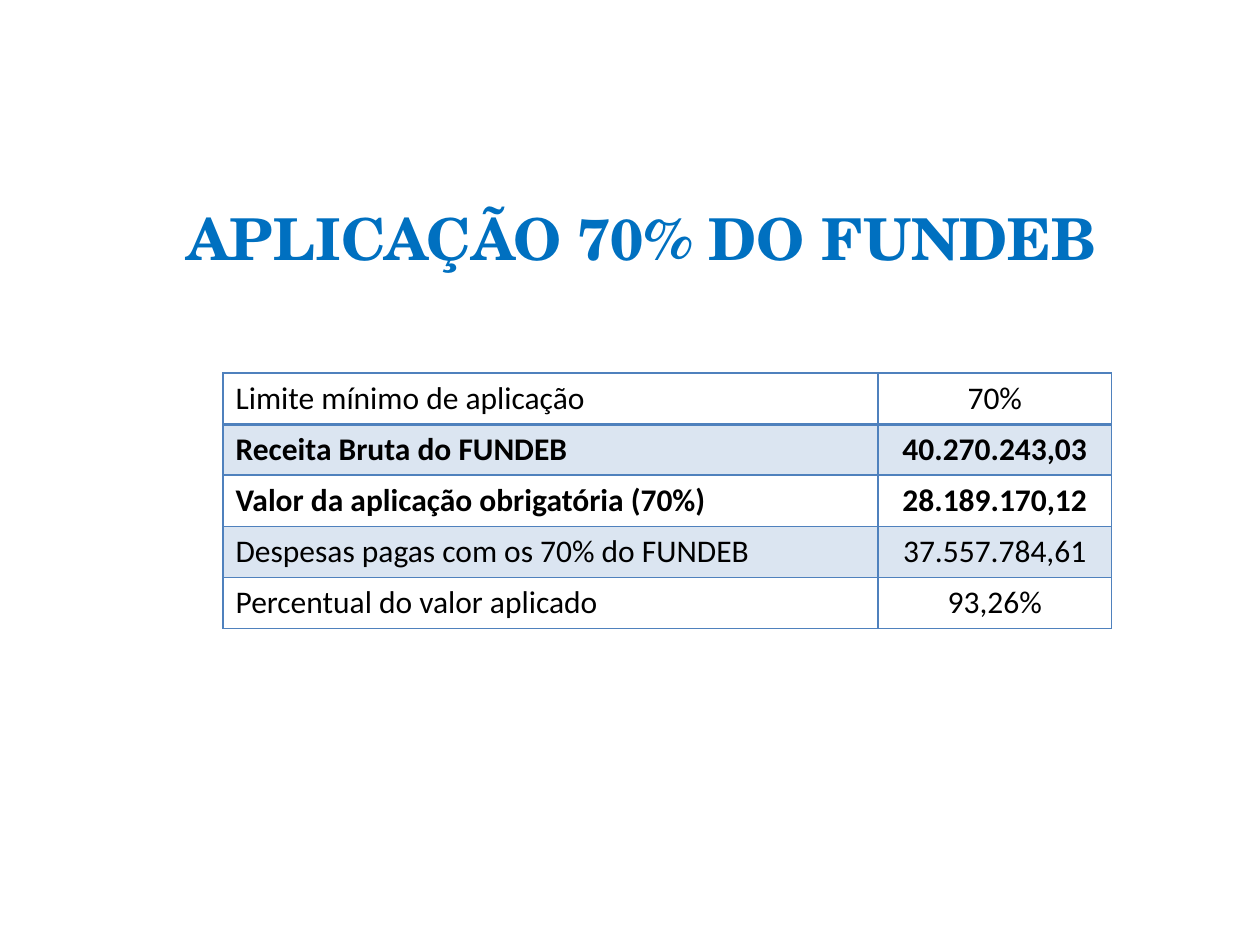
from lxml.etree import SubElement
from pptx import Presentation
from pptx.dml.color import RGBColor
from pptx.enum.text import MSO_ANCHOR, PP_ALIGN
from pptx.oxml.ns import qn
from pptx.util import Inches, Pt

COLORS = {"title": "0070C0", "accent": "4F81BD", "text": "000000"}

ROWS = [
    # label, value, bold
    ("Limite mínimo de aplicação", "70%", False),
    ("Receita Bruta do FUNDEB", "40.270.243,03", True),
    ("Valor da aplicação obrigatória (70%)", "28.189.170,12", True),
    ("Despesas pagas com os 70% do FUNDEB", "37.557.784,61", False),
    ("Percentual do valor aplicado", "93,26%", False),
]
COLUMN_WIDTHS = [5.2, 1.85]


def format_run(run, font_name, size, color, bold):
    run.font.name = font_name
    run.font.size = Pt(size)
    run.font.color.rgb = RGBColor.from_string(COLORS[color])
    run.font.bold = bold


def add_borders(cell, widths):
    """Draw the cell's edges; widths maps an edge tag to points."""
    properties = cell._tc.get_or_add_tcPr()
    for position, (edge, width) in enumerate(widths.items()):
        line = properties.makeelement(qn(f"a:{edge}"), {"w": str(Pt(width))})
        fill = SubElement(line, qn("a:solidFill"))
        SubElement(fill, qn("a:srgbClr"), val=COLORS["accent"])
        properties.insert(position, line)


presentation = Presentation()
presentation.slide_width = Inches(10)
presentation.slide_height = Inches(7.5)
slide = presentation.slides.add_slide(presentation.slide_layouts[5])

# Title
title = slide.shapes.title
title.left, title.top = Inches(0.59), Inches(0.76)
title.width, title.height = Inches(9), Inches(1.5)
title_frame = title.text_frame
title_frame.text = "APLICAÇÃO 70% DO FUNDEB"
title_frame.vertical_anchor = MSO_ANCHOR.BOTTOM
title_frame.margin_bottom = Inches(0.1)
title_paragraph = title_frame.paragraphs[0]
title_paragraph.alignment = PP_ALIGN.CENTER
format_run(title_paragraph.runs[0], "TeX Gyre Schola", 33, "title", True)

# Table
table = slide.shapes.add_table(
    len(ROWS), len(COLUMN_WIDTHS),
    Inches(1.77), Inches(2.96), Inches(sum(COLUMN_WIDTHS)), Inches(2.03),
).table
table.first_row = False
table.horz_banding = False
for column, width in zip(table.columns, COLUMN_WIDTHS):
    column.width = Inches(width)

for row_index, (label, value, bold) in enumerate(ROWS):
    for column_index, text in enumerate((label, value)):
        cell = table.cell(row_index, column_index)
        cell.text_frame.text = text
        paragraph = cell.text_frame.paragraphs[0]
        paragraph.alignment = PP_ALIGN.CENTER if column_index else PP_ALIGN.LEFT
        format_run(paragraph.runs[0], "Calibri", 18, "text", bold)

        if row_index % 2:
            cell.fill.solid()
            cell.fill.fore_color.rgb = RGBColor.from_string(COLORS["accent"])
            fill_color = cell._tc.tcPr.find(".//" + qn("a:srgbClr"))
            SubElement(fill_color, qn("a:alpha"), val="20000")
        else:
            cell.fill.background()

        add_borders(cell, {
            "lnL": 1,
            "lnR": 1,
            "lnT": 2 if row_index == 1 else 1,
            "lnB": 2 if row_index == 0 else 1,
        })

presentation.save("out.pptx")
